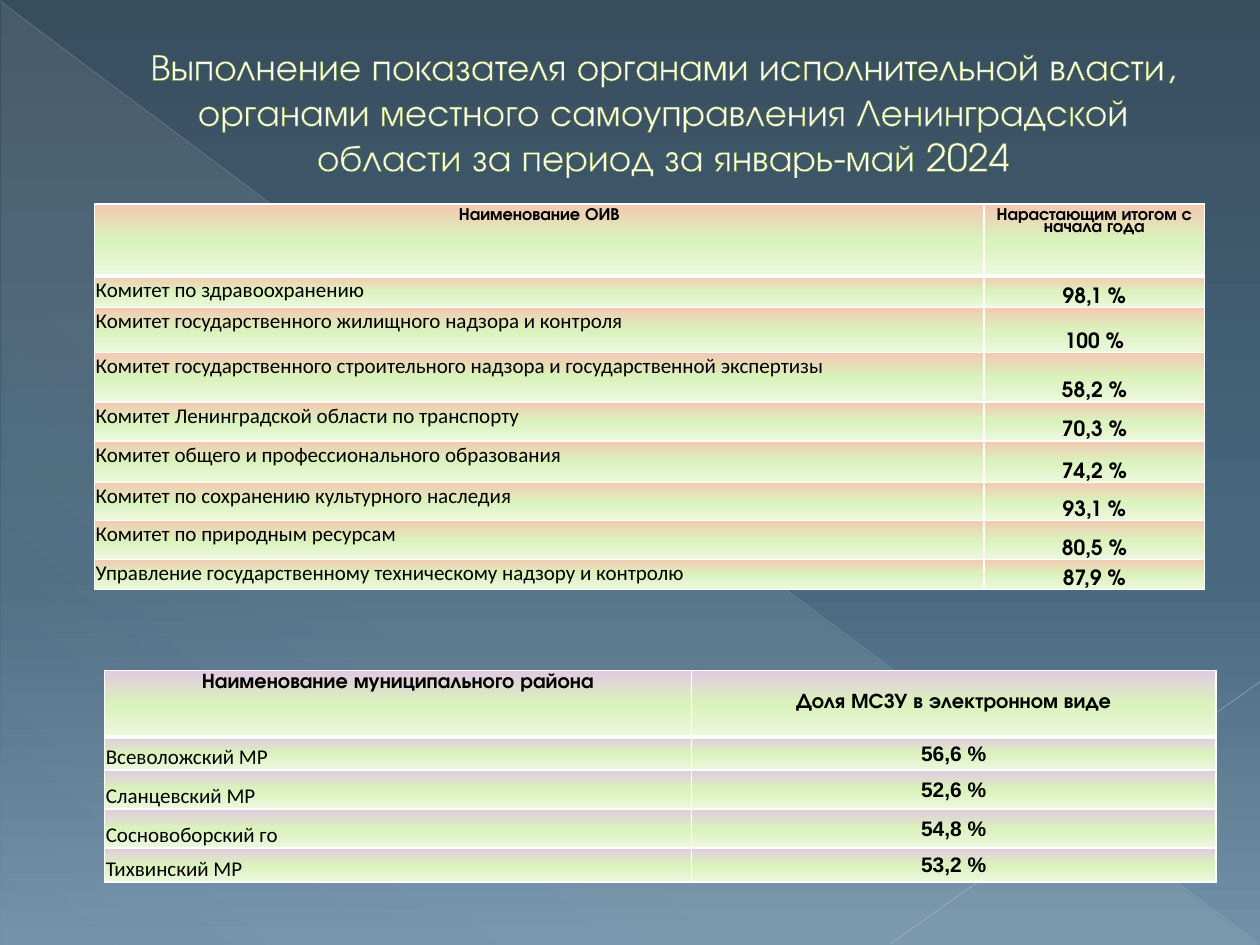
from lxml import etree
from pptx import Presentation
from pptx.dml.color import RGBColor
from pptx.enum.shapes import MSO_CONNECTOR, MSO_SHAPE
from pptx.enum.text import MSO_ANCHOR, MSO_AUTO_SIZE, PP_ALIGN
from pptx.oxml.ns import qn
from pptx.util import Inches, Pt

TOP, MIDDLE, BOTTOM = MSO_ANCHOR.TOP, MSO_ANCHOR.MIDDLE, MSO_ANCHOR.BOTTOM
LEFT, CENTER = PP_ALIGN.LEFT, PP_ALIGN.CENTER
STRAIGHT = MSO_CONNECTOR.STRAIGHT
NO_AUTOFIT = MSO_AUTO_SIZE.NONE

WHITE = RGBColor(0xFF, 0xFF, 0xFF)
BLACK = RGBColor(0, 0, 0)
OLIVE = RGBColor(0x69, 0x8A, 0x18)
NIGHT = RGBColor(0x37, 0x4E, 0x5F)
SLATE = RGBColor(0x49, 0x68, 0x7E)
HAZE = RGBColor(0x72, 0x91, 0xA8)
MIST = RGBColor(0xE7, 0xEC, 0xED)
GREY = RGBColor(0xBA, 0xC0, 0xC6)
LIGHT_GREY = RGBColor(0xC2, 0xC7, 0xCC)
PEACH = RGBColor(0xF3, 0xC9, 0xB1)
LILAC = RGBColor(0xE2, 0xCA, 0xE1)
LIME = RGBColor(0xDA, 0xF2, 0xBC)
PALE_LIME = RGBColor(0xEC, 0xF8, 0xDE)

DISPLAY, BODY, PLAIN = "TeX Gyre Adventor", "Calibri", "Arial"

TITLE = ("Выполнение показателя органами исполнительной власти, органами "
         "местного самоуправления Ленинградской области за период "
         "за январь-май 2024")
COMMITTEES = [
    ("Наименование ОИВ", "Нарастающим итогом с начала года"),
    ("Комитет по здравоохранению", "98,1 %"),
    ("Комитет государственного жилищного надзора и контроля", "100 %"),
    ("Комитет государственного строительного надзора и государственной экспертизы",
     "58,2 %"),
    ("Комитет Ленинградской области по транспорту", "70,3 %"),
    ("Комитет общего и профессионального образования", "74,2 %"),
    ("Комитет по сохранению культурного наследия", "93,1 %"),
    ("Комитет по природным ресурсам", "80,5 %"),
    ("Управление государственному техническому надзору и контролю", "87,9 %"),
]
DISTRICTS = [
    ("Наименование муниципального района", "Доля МСЗУ в электронном виде"),
    ("Всеволожский МР", "56,6 %"),
    ("Сланцевский МР", "52,6 %"),
    ("Сосновоборский го", "54,8 %"),
    ("Тихвинский МР", "53,2 %"),
]


def add_color(parent, color, opacity=100):
    clr = etree.SubElement(parent, qn("a:srgbClr"), val=str(color))
    if opacity < 100:
        etree.SubElement(clr, qn("a:alpha"), val=str(opacity * 1000))


def set_gradient(fill, parent, stops, angle=90):
    """Fill with (position, colour[, opacity]) stops; parent holds the fill element."""
    fill.solid()
    grad = etree.Element(qn("a:gradFill"), rotWithShape="1")
    stop_list = etree.SubElement(grad, qn("a:gsLst"))
    for position, *color in stops:
        stop = etree.SubElement(stop_list, qn("a:gs"), pos=str(position * 1000))
        add_color(stop, *color)
    etree.SubElement(grad, qn("a:lin"), ang=str(angle * 60000), scaled="0")
    parent.replace(parent.find(qn("a:solidFill")), grad)


def make_line(tag, color, width):
    ln = etree.Element(qn(tag), w=str(Pt(width)))
    add_color(etree.SubElement(ln, qn("a:solidFill")), color)
    return ln


def add_thin_line(s, start, end, color, width, opacity):
    line = s.shapes.add_connector(STRAIGHT, *map(Inches, start + end))
    line.line.width = Pt(width)
    line.line.color.rgb = color
    clr = line.element.spPr.find(".//" + qn("a:srgbClr"))
    etree.SubElement(clr, qn("a:alpha"), val=str(opacity * 1000))
    etree.SubElement(line.element.spPr, qn("a:effectLst"))


def add_backdrop(s):
    s.background.fill.solid()
    set_gradient(s.background.fill, s.element.find(".//" + qn("p:bgPr")),
                 [(0, NIGHT), (60, SLATE), (100, HAZE)])
    triangle = s.shapes.add_shape(MSO_SHAPE.RIGHT_TRIANGLE, Inches(0.01), Inches(0.02),
                                  Inches(9.98), Inches(7.48))
    triangle.shadow.inherit = False
    triangle.line.fill.background()
    set_gradient(triangle.fill, triangle.element.spPr,
                 [(0, MIST, 10), (70, MIST, 8), (100, MIST, 1)], 133)
    add_thin_line(s, (0, 0.01), (9.99, 7.49), GREY, 0.39, 35)
    add_thin_line(s, (10, 5.41), (7.07, 7.49), LIGHT_GREY, 0.47, 45)


def write(tf, text, align, font):
    p = tf.paragraphs[0]
    p.alignment = align
    r = p.add_run()
    r.text = text
    for name, value in font.items():
        setattr(r.font, name, value)
    return p, r


def format_title(s):
    title = s.shapes.title
    s.shapes.element.append(title.element)  # in front of the backdrop
    title.left, title.top, title.width, title.height = map(Inches, (0.5, 0.13, 9, 1.5))
    tf = title.text_frame
    tf.auto_size = NO_AUTOFIT
    tf.vertical_anchor = MIDDLE
    p, r = write(tf, TITLE, CENTER, {"size": Pt(21.6), "name": DISPLAY})
    r.font.color.rgb = WHITE
    r.font._element.insert(0, make_line("a:ln", OLIVE, 0.5))
    pPr = p._p.get_or_add_pPr()
    pPr.set("marL", str(Inches(0.53)))
    pPr.set("indent", "0")


def format_cell(cell, text, top_color, style, is_header):
    align, anchor, font = style
    cell.vertical_anchor = anchor
    if not is_header:
        cell.margin_left = cell.margin_top = cell.margin_right = Inches(0.01)
        cell.margin_bottom = 0
    p, r = write(cell.text_frame, text, align, font)
    r.font.color.rgb = BLACK
    if is_header:
        p.line_spacing = 0.77
    tcPr = cell._tc.get_or_add_tcPr()
    set_gradient(cell.fill, tcPr, [(0, top_color), (50, LIME), (100, PALE_LIME)])
    for i, side in enumerate("LRTB"):
        width = 3 if is_header and side == "B" else 1
        tcPr.insert(i, make_line("a:ln" + side, WHITE, width))


def add_data_table(s, left, top, widths, heights, rows, top_color,
                   header_styles, body_styles):
    """Styles are one (alignment, anchor, font values) per column."""
    frame = s.shapes.add_table(len(rows), len(widths), Inches(left), Inches(top),
                               Inches(sum(widths)), Inches(sum(heights)))
    table = frame.table
    table.horz_banding = False
    for column, width in zip(table.columns, widths):
        column.width = Inches(width)
    for i, (row, height, texts) in enumerate(zip(table.rows, heights, rows)):
        row.height = Inches(height)
        styles = body_styles if i else header_styles
        for cell, text, style in zip(row.cells, texts, styles):
            format_cell(cell, text, top_color, style, i == 0)


def font_values(name, size, bold):
    return {"name": name, "size": Pt(size), "bold": bold}


def main():
    prs = Presentation()
    prs.slide_width, prs.slide_height = Inches(10), Inches(7.5)
    s = prs.slides.add_slide(prs.slide_layouts[5])
    add_backdrop(s)
    format_title(s)

    small_header = font_values(DISPLAY, 10, True)
    header = font_values(DISPLAY, 12, True)
    label = font_values(BODY, 12, False)
    number = font_values(PLAIN, 12, True)
    add_data_table(s, 0.75, 1.62, [7.06, 1.75],
                   [0.57, 0.25, 0.36, 0.39, 0.31, 0.33, 0.3, 0.31, 0.24],
                   COMMITTEES, PEACH,
                   [(CENTER, TOP, small_header)] * 2,
                   [(LEFT, TOP, label), (CENTER, BOTTOM, header)])
    add_data_table(s, 0.83, 5.32, [4.66, 4.16], [0.53, 0.26, 0.31, 0.31, 0.27],
                   DISTRICTS, LILAC,
                   [(CENTER, TOP, header), (CENTER, MIDDLE, header)],
                   [(LEFT, BOTTOM, label), (CENTER, MIDDLE, number)])
    prs.save("out.pptx")


if __name__ == "__main__":
    main()
